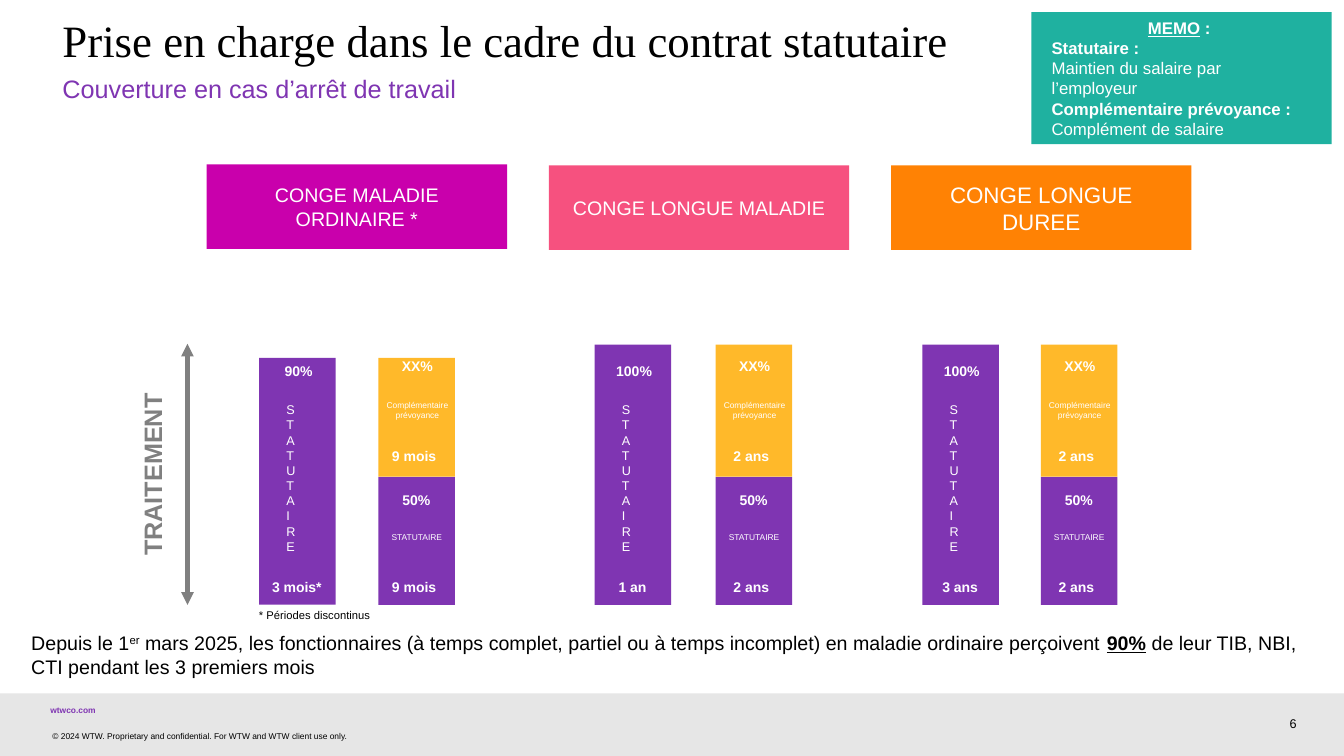
from lxml import etree
from pptx import Presentation
from pptx.dml.color import RGBColor
from pptx.enum.shapes import MSO_CONNECTOR, MSO_SHAPE
from pptx.enum.text import MSO_ANCHOR, MSO_AUTO_SIZE, PP_ALIGN
from pptx.oxml.ns import qn
from pptx.util import Inches, Pt

STRAIGHT = MSO_CONNECTOR.STRAIGHT
RECTANGLE = MSO_SHAPE.RECTANGLE
TOP, MIDDLE, BOTTOM = MSO_ANCHOR.TOP, MSO_ANCHOR.MIDDLE, MSO_ANCHOR.BOTTOM
NO_AUTOFIT = MSO_AUTO_SIZE.NONE
LEFT, CENTER, RIGHT = PP_ALIGN.LEFT, PP_ALIGN.CENTER, PP_ALIGN.RIGHT

WIDTH, HEIGHT = Inches(13.33), Inches(7.5)
COLORS = {
    "black": "000000", "white": "FFFFFF", "grey": "808080", "footer": "E6E6E6",
    "purple": "7F35B2", "yellow": "FFB92A", "magenta": "C900AC",
    "pink": "F6517F", "orange": "FF8204", "teal": "1FB1A0",
}
TEXT_INSETS = (0.1, 0.05, 0.1, 0.05)
CARD_INSETS = (0.2, 0, 0.2, 0)
LABEL_INSETS = (0, 0.1, 0, 0)
NO_INSETS = (0, 0, 0, 0)

BAR_WIDTH, BAR_BOTTOM, BAR_SPLIT = 5.7, 80, 63.07
HEADER_LEFT, HEADER_STEP, HEADER_WIDTH = 15.38, 25.46, 22.35
LEAVES = [
    {"title": "CONGE MALADIE ORDINAIRE *", "color": "magenta", "size": 14,
     "header_top": 21.73, "full_left": 19.28, "split_left": 28.16, "top": 47.33,
     "rate": "90%", "full_term": "3 mois*", "half_term": "9 mois"},
    {"title": "CONGE LONGUE MALADIE", "color": "pink", "size": 14,
     "header_top": 21.87, "full_left": 44.25, "split_left": 53.25, "top": 45.6,
     "rate": "100%", "full_term": "1 an", "half_term": "2 ans"},
    {"title": "CONGE LONGUE DUREE", "color": "orange", "size": 16,
     "header_top": 21.87, "full_left": 68.63, "split_left": 77.44, "top": 45.6,
     "rate": "100%", "full_term": "3 ans", "half_term": "2 ans"},
]


def area(left, top, width, height):
    return [round(share * length / 100) for share, length in
            zip((left, top, width, height), (WIDTH, HEIGHT, WIDTH, HEIGHT))]


def write(frame, text, size=10, color="white", font="Arial", bold=False, align=LEFT,
          anchor=TOP, insets=TEXT_INSETS, wrap=True, vert=None, spacing=None):
    frame.auto_size = NO_AUTOFIT
    frame.word_wrap = wrap
    frame.vertical_anchor = anchor
    (frame.margin_left, frame.margin_top,
     frame.margin_right, frame.margin_bottom) = map(Inches, insets)
    if vert:
        frame._txBody.bodyPr.set("vert", vert)
    lines = [(align, [(text, {})])] if isinstance(text, str) else text
    for index, (line_align, parts) in enumerate(lines):
        paragraph = frame.paragraphs[0] if index == 0 else frame.add_paragraph()
        paragraph.alignment = line_align
        paragraph.space_before = Pt(0)
        if spacing:
            paragraph.line_spacing = spacing
        for words, style in parts:
            run = paragraph.add_run()
            run.text = words
            run.font.name = font
            run.font.size = Pt(size)
            run.font.color.rgb = RGBColor.from_string(COLORS[color])
            run.font.bold = style.get("bold", bold)
            run.font.underline = style.get("underline", False)
            if "baseline" in style:
                run.font._element.set("baseline", style["baseline"])


def add_label(slide, box, text, **style):
    write(slide.shapes.add_textbox(*area(*box)).text_frame, text, **style)


def add_block(slide, box, color, text=None, **style):
    block = slide.shapes.add_shape(RECTANGLE, *area(*box))
    block.shadow.inherit = False
    block.fill.solid()
    block.fill.fore_color.rgb = RGBColor.from_string(COLORS[color])
    block.line.fill.background()
    if text:
        write(block.text_frame, text, anchor=MIDDLE, insets=CARD_INSETS, **style)


def add_double_arrow(slide, x, top, bottom):
    left, start, _, end = area(x, top, 0, bottom)
    arrow = slide.shapes.add_connector(STRAIGHT, left, start, left, end)
    arrow.line.color.rgb = RGBColor.from_string(COLORS["grey"])
    arrow.line.width = Pt(3)
    outline = arrow.line._get_or_add_ln()
    for end_name in ("a:headEnd", "a:tailEnd"):
        etree.SubElement(outline, qn(end_name), type="triangle")
    etree.SubElement(arrow._element.spPr, qn("a:effectLst"))


def fill_placeholder(holder, box, text, **style):
    holder.left, holder.top, holder.width, holder.height = area(*box)
    write(holder.text_frame, text, **style)


def add_figure(slide, left, top, text, width=BAR_WIDTH):
    add_label(slide, (left, top, width, 3.6), text, bold=True, align=CENTER)


def add_full_bar(slide, leave):
    left, top = leave["full_left"], leave["top"]
    add_block(slide, (left, top, BAR_WIDTH, BAR_BOTTOM - top), "purple")
    add_label(slide, (left + 2.03, 51.87, 1.5, 24.13), "STATUTAIRE", size=9,
              insets=LABEL_INSETS, vert="wordArtVert")
    add_figure(slide, left + 0.08, 47.33, leave["rate"])
    add_figure(slide, left - 0.04, 75.87, leave["full_term"])


def add_split_bar(slide, leave):
    left, top = leave["split_left"], leave["top"]
    add_block(slide, (left, BAR_SPLIT, BAR_WIDTH, BAR_BOTTOM - BAR_SPLIT), "purple")
    add_block(slide, (left, top, BAR_WIDTH, BAR_SPLIT - top), "yellow")
    add_label(slide, (left + 0.98, 69.07, 4.58, 4.27), "STATUTAIRE", size=6,
              insets=LABEL_INSETS)
    add_label(slide, (left + 0.08, 51.6, 5.63, 4.93), "Complémentaire prévoyance",
              size=6, align=CENTER, insets=LABEL_INSETS)
    add_figure(slide, left + 0.05, 46.67, "XX%")
    add_figure(slide, left - 0.2, 58.53, leave["half_term"])
    add_figure(slide, left + 0.2, 64.4, "50%", width=5.25)
    add_figure(slide, left - 0.2, 75.87, leave["half_term"])


def add_footer(slide):
    add_block(slide, (0, 91.73, 100, 8.27), "footer")
    add_label(slide, (3.75, 93.33, 3.4, 1.33), "wtwco.com", size=6, color="purple",
              bold=True, insets=NO_INSETS, wrap=False)
    add_label(slide, (93.92, 93.6, 2.55, 3.07), "6", size=9, color="black",
              align=RIGHT, anchor=BOTTOM, insets=NO_INSETS)
    add_label(slide, (3.9, 96.67, 26.25, 1.33),
              "© 2024 WTW. Proprietary and confidential. For WTW and WTW client use only.",
              size=6, color="black", insets=NO_INSETS)


def add_headings(slide):
    title, subtitle = slide.placeholders
    fill_placeholder(title, (3.9, 1.87, 92.27, 6.67),
                     "Prise en charge dans le cadre du contrat statutaire",
                     size=32, color="black", font="Times New Roman", spacing=0.9)
    properties = subtitle.text_frame.paragraphs[0]._p.get_or_add_pPr()
    properties.set("marL", "0")
    properties.set("indent", "0")
    etree.SubElement(properties, qn("a:buNone"))
    fill_placeholder(subtitle, (3.9, 9.07, 92.27, 5.33),
                     "Couverture en cas d’arrêt de travail", size=18, color="purple")


def main():
    deck = Presentation()
    deck.slide_width, deck.slide_height = WIDTH, HEIGHT
    slide = deck.slides.add_slide(deck.slide_layouts[1])
    add_footer(slide)
    add_headings(slide)
    add_label(slide, (9.83, 46.4, 3.75, 32.8), "TRAITEMENT", size=18, color="grey",
              bold=True, align=CENTER, vert="vert270")
    add_double_arrow(slide, 13.95, 45.47, BAR_BOTTOM)
    add_label(slide, (18.53, 79.87, 27.68, 3.2), "* Périodes discontinus",
              size=8, color="black")
    for column, leave in enumerate(LEAVES):
        header = (HEADER_LEFT + column * HEADER_STEP, leave["header_top"],
                  HEADER_WIDTH, 11.2)
        add_block(slide, header, leave["color"], leave["title"],
                  size=leave["size"], align=CENTER)
        add_full_bar(slide, leave)
        add_split_bar(slide, leave)
    strong = {"bold": True}
    memo = [
        (CENTER, [("MEMO", {"bold": True, "underline": True}), (" : ", strong)]),
        (LEFT, [("Statutaire :", strong)]),
        (LEFT, [("Maintien du salaire par l’employeur", {})]),
        (LEFT, [("Complémentaire prévoyance :", strong)]),
        (LEFT, [("Complément de salaire", {})]),
    ]
    add_block(slide, (76.74, 1.6, HEADER_WIDTH, 17.47), "teal", memo, size=12)
    rule = [(LEFT, [
        ("Depuis le 1", {}), ("er", {"baseline": "30000"}),
        (" mars 2025, les fonctionnaires (à temps complet, partiel ou à temps incomplet)"
         " en maladie ordinaire perçoivent ", {}),
        ("90%", {"bold": True, "underline": True}),
        (" de leur TIB, NBI, CTI pendant les 3 premiers mois", {}),
    ])]
    add_label(slide, (1.58, 82.8, 97.45, 7.6), rule, size=14, color="black")
    deck.save("out.pptx")


if __name__ == "__main__":
    main()
